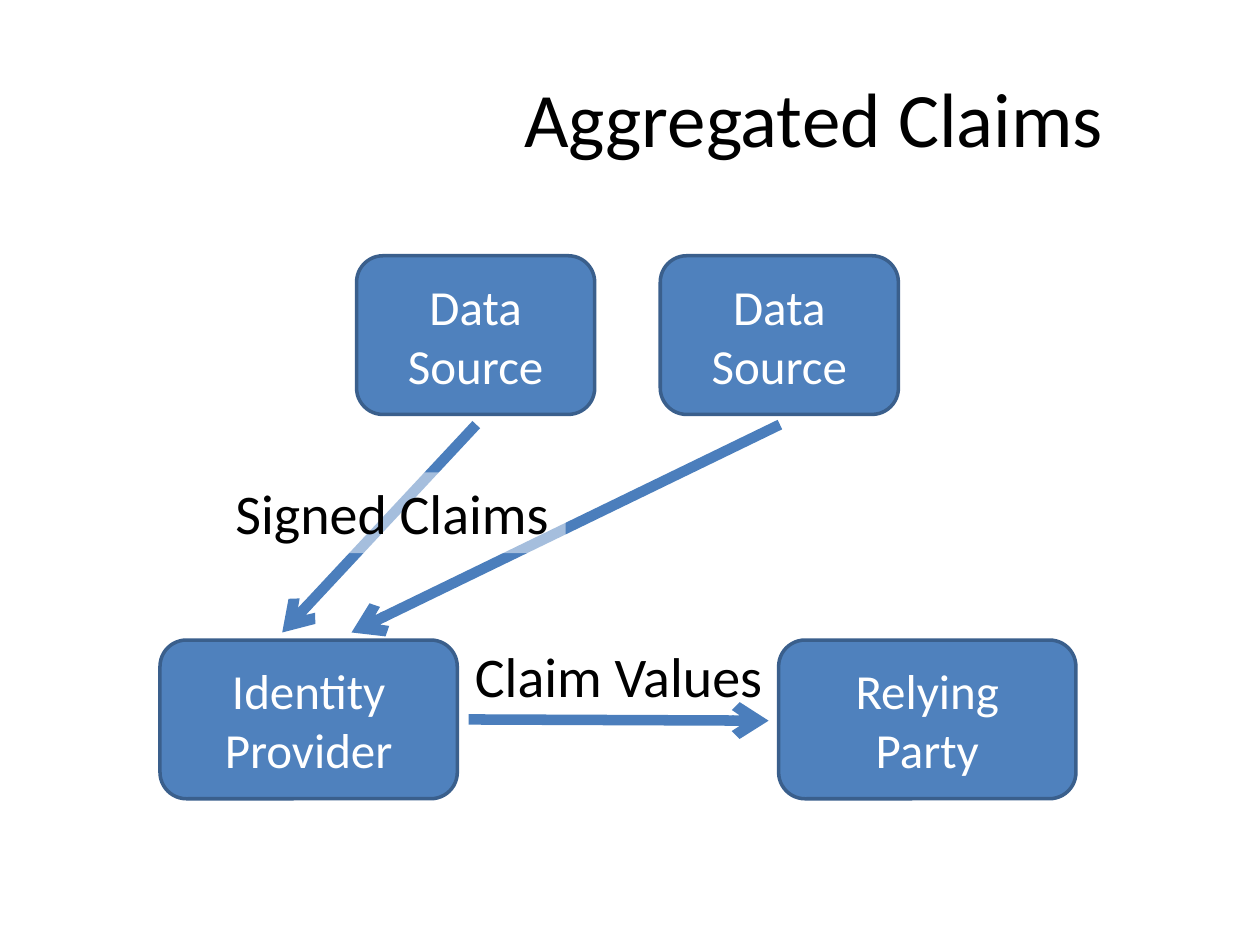
import pptx
import pptx.util
import pptx.dml.color
import pptx.enum.shapes
import pptx.enum.text
import pptx.oxml
import pptx.oxml.ns
import lxml.etree

RGBColor = pptx.dml.color.RGBColor
BLACK = RGBColor(0x00, 0x00, 0x00)
WHITE = RGBColor(0xFF, 0xFF, 0xFF)
BLUE = RGBColor(0x4F, 0x81, 0xBD)
OUTLINE = RGBColor(0x3A, 0x5F, 0x8C)
ARROW = RGBColor(0x4B, 0x7E, 0xBC)
CENTER = pptx.enum.text.PP_ALIGN.CENTER
LEFT = pptx.enum.text.PP_ALIGN.LEFT
MIDDLE = pptx.enum.text.MSO_ANCHOR.MIDDLE
TOP = pptx.enum.text.MSO_ANCHOR.TOP
SHAPES = pptx.enum.shapes.MSO_SHAPE
qn = pptx.oxml.ns.qn

deck = pptx.Presentation()
deck.slide_width = pptx.util.Inches(10)
deck.slide_height = pptx.util.Inches(7.5)
page = deck.slides.add_slide(deck.slide_layouts[6])
COLUMN = deck.slide_width / 100
ROW = deck.slide_height / 75


def place(left, top, width, height):
    return (round(left * COLUMN), round(top * ROW),
            round(width * COLUMN), round(height * ROW))


def write(box, lines, size, color, align, anchor, wrap):
    frame = box.text_frame
    frame.word_wrap = wrap
    frame.vertical_anchor = anchor
    for index, line in enumerate(lines):
        para = frame.paragraphs[0] if index == 0 else frame.add_paragraph()
        para.alignment = align
        span = para.add_run()
        span.text = line
        span.font.size = pptx.util.Pt(size)
        span.font.name = "Calibri"
        span.font.color.rgb = color


title = page.shapes.add_textbox(*place(34.2, 3, 60.8, 12.5))
write(title, ["Aggregated Claims"], 44, BLACK, CENTER, MIDDLE, True)

NODE_HEIGHT = 12.6
SOURCE_TOP, SOURCE_WIDTH = 20.3, 18.9
PARTY_TOP, PARTY_WIDTH = 50.8, 23.6
nodes = [
    (28.3, SOURCE_TOP, SOURCE_WIDTH, ["Data Source"]),
    (52.4, SOURCE_TOP, SOURCE_WIDTH, ["Data Source"]),
    (12.7, PARTY_TOP, PARTY_WIDTH, ["Identity Provider"]),
    (61.8, PARTY_TOP, PARTY_WIDTH, ["Relying", "Party"]),
]
for left, top, width, lines in nodes:
    node = page.shapes.add_shape(
        SHAPES.ROUNDED_RECTANGLE, *place(left, top, width, NODE_HEIGHT))
    node.shadow.inherit = False
    node.fill.solid()
    node.fill.fore_color.rgb = BLUE
    node.line.color.rgb = OUTLINE
    node.line.width = pptx.util.Pt(2)
    write(node, lines, 28, WHITE, CENTER, MIDDLE, True)

arrows = [
    (37.8, 33.7, 22.4, 50.2),
    (61.9, 33.7, 27.9, 50.2),
    (37.2, 57.1, 61, 57.2),
]
for ends in arrows:
    arrow = page.shapes.add_connector(
        pptx.enum.shapes.MSO_CONNECTOR.STRAIGHT, *place(*ends))
    arrow.line.color.rgb = ARROW
    arrow.line.width = pptx.util.Pt(6)
    lxml.etree.SubElement(arrow.line._get_or_add_ln(), qn("a:tailEnd"), type="arrow")
    lxml.etree.SubElement(arrow._element.spPr, qn("a:effectLst"))

signed = page.shapes.add_shape(SHAPES.RECTANGLE, *place(17.7, 37.5, 27.2, 6.4))
signed.shadow.inherit = False
signed.fill.solid()
signed.fill.fore_color.rgb = WHITE
white = signed._element.spPr.find(qn("a:solidFill")).find(qn("a:srgbClr"))
lxml.etree.SubElement(white, qn("a:alpha"), val="50000")
signed.line.fill.background()
values = page.shapes.add_textbox(*place(36.7, 50.4, 25.1, 6.4))

for label, words in [(signed, "Signed Claims"), (values, "Claim Values")]:
    write(label, [words], 32, BLACK, LEFT, TOP, False)
    label.text_frame.auto_size = pptx.enum.text.MSO_AUTO_SIZE.SHAPE_TO_FIT_TEXT

deck.save("out.pptx")
